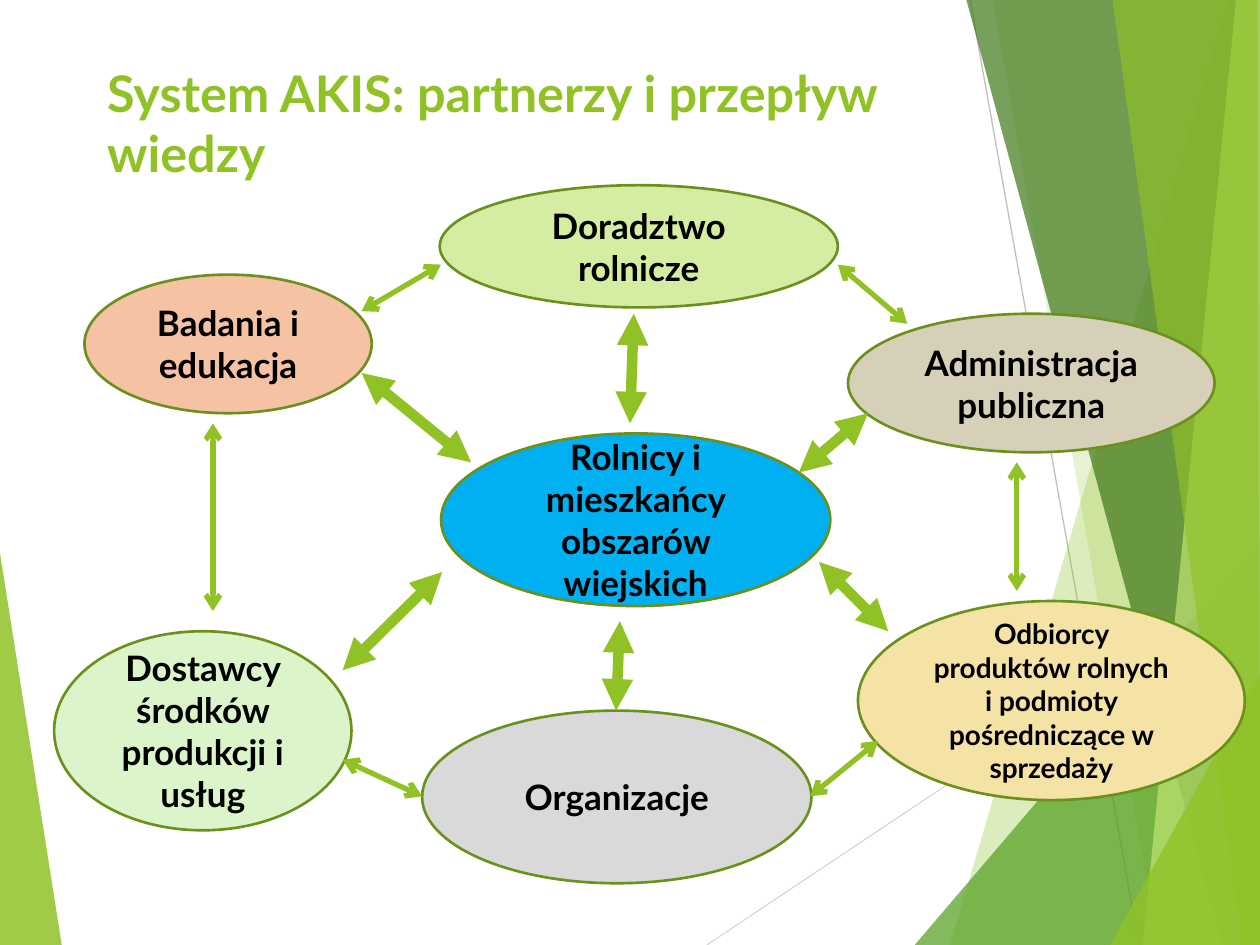
from lxml import etree
from pptx import Presentation
from pptx.dml.color import RGBColor
from pptx.enum.shapes import MSO_CONNECTOR, MSO_SHAPE
from pptx.enum.text import MSO_ANCHOR, MSO_AUTO_SIZE, PP_ALIGN
from pptx.oxml.ns import qn
from pptx.util import Inches, Pt

STRAIGHT = MSO_CONNECTOR.STRAIGHT
OVAL = MSO_SHAPE.OVAL
TOP, MIDDLE = MSO_ANCHOR.TOP, MSO_ANCHOR.MIDDLE
LEFT, CENTER = PP_ALIGN.LEFT, PP_ALIGN.CENTER
NO_FIT = MSO_AUTO_SIZE.NONE

COLORS = {
    "green": "90C226", "leaf": "54A021", "forest": "3F7819", "lime": "C0E474",
    "outline": "6B901C", "black": "000000", "light_gray": "D9D9D9",
    "mid_gray": "BFBFBF", "mint": "DBF4CA", "stone": "D6D0B8",
    "sand": "F5E3A5", "peach": "F5C2A3", "pale_lime": "D5EDA2", "blue": "00B0F0",
}

TITLE = "System AKIS: partnerzy i przepływ wiedzy"

LEFT_WEDGE = ("green", 85, [(0, 4.39), (0.49, 7.5), (0, 7.5)])
RIGHT_FACETS = [
    ("green", 30, [(9.75, 0), (7.54, 7.5), (10, 7.5), (10, 0)]),
    ("green", 20, [(7.88, 0), (9.19, 7.5), (10, 7.5), (10, 0)]),
    ("leaf", 72, [(7.26, 7.5), (10, 4.29), (10, 7.5)]),
    ("forest", 70, [(7.67, 0), (9.7, 7.5), (10, 7.5), (10, 0)]),
    ("lime", 70, [(9.81, 0), (9.07, 7.5), (10, 7.5), (10, 0)]),
    ("green", 65, [(8.83, 0), (9.86, 7.5), (10, 7.5), (9.98, 0)]),
    ("green", 80, [(8.81, 7.5), (10, 5.35), (10, 7.5)]),
]
THIN_LINES = [
    ("light_gray", (5.61, 7.5, 10, 4.57)),
    ("mid_gray", (7.7, 0, 9.04, 7.5)),
]

PARTNERS = [
    ("Dostawcy środków produkcji i usług", "mint", 20, (0.43, 5.01, 2.36, 1.58)),
    ("Organizacje", "light_gray", 20, (3.35, 5.64, 3.09, 1.37)),
    ("Administracja publiczna", "stone", 20, (6.73, 2.49, 2.91, 1.1)),
    ("Odbiorcy produktów rolnych i podmioty pośredniczące w sprzedaży",
     "sand", 16, (6.81, 4.77, 3.07, 1.58)),
    ("Badania i edukacja", "peach", 20, (0.67, 2.18, 2.28, 1.1)),
    ("Doradztwo rolnicze", "pale_lime", 20, (3.49, 1.47, 3.16, 0.97)),
    ("Rolnicy i mieszkańcy obszarów wiejskich", "blue", 20, (3.5, 3.44, 3.09, 1.37)),
]

CENTRE_FLOWS = [
    (3.51, 4.54, 2.72, 5.32), (4.92, 4.93, 4.89, 5.64), (3.74, 3.67, 2.87, 2.96),
    (7.05, 5.01, 6.5, 4.46), (6.89, 3.28, 6.34, 3.75), (5.03, 2.49, 5, 3.36),
]
RING_FLOWS = [
    (6.65, 2.1, 7.2, 2.57), (8.07, 3.67, 8.07, 4.69), (1.69, 3.36, 1.69, 4.85),
    (6.97, 5.88, 6.43, 6.32), (3.5, 2.1, 2.87, 2.47), (2.72, 6.03, 3.35, 6.32),
]


def rgb(name):
    """Return the named colour."""
    return RGBColor.from_string(COLORS[name])


def write_text(sp, text, size, color, align, anchor):
    """Put one bold paragraph into a shape."""
    tf = sp.text_frame
    frame_format = {"word_wrap": True, "auto_size": NO_FIT, "vertical_anchor": anchor}
    for name, value in frame_format.items():
        setattr(tf, name, value)
    p = tf.paragraphs[0]
    p.alignment = align
    r = p.add_run()
    r.text = text
    for name, value in {"name": "Lato", "size": Pt(size), "bold": True}.items():
        setattr(r.font, name, value)
    r.font.color.rgb = rgb(color)


def add_title(s):
    """Place and fill the title placeholder."""
    sp = s.shapes.title
    box = {"left": 0.75, "top": 0.44, "width": 6.94, "height": 0.88}
    for name, value in box.items():
        setattr(sp, name, Inches(value))
    write_text(sp, TITLE, 28.8, "green", LEFT, TOP)


def add_facet(s, color, opacity, points):
    """Draw a translucent background polygon."""
    corners = [(Inches(x), Inches(y)) for x, y in points]
    builder = s.shapes.build_freeform(*corners[0])
    builder.add_line_segments(corners[1:])
    sp = builder.convert_to_shape()
    sp.shadow.inherit = False
    sp.fill.solid()
    sp.fill.fore_color.rgb = rgb(color)
    sp.line.fill.background()
    clr = sp.fill._xPr.find(qn("a:solidFill"))[0]
    etree.SubElement(clr, qn("a:alpha"), val=str(opacity * 1000))


def add_line(s, ends, color, width, head=None):
    """Draw a straight line, with the given arrowhead at both ends."""
    sp = s.shapes.add_connector(STRAIGHT, *map(Inches, ends))
    sp.line.color.rgb = rgb(color)
    sp.line.width = Pt(width)
    if head:
        ln = sp.line._get_or_add_ln()
        for tag in ("a:headEnd", "a:tailEnd"):
            etree.SubElement(ln, qn(tag), type=head)
    etree.SubElement(sp._element.spPr, qn("a:effectLst"))


def add_partner(s, text, color, size, box):
    """Draw one labelled ellipse."""
    sp = s.shapes.add_shape(OVAL, *map(Inches, box))
    sp.shadow.inherit = False
    sp.fill.solid()
    sp.fill.fore_color.rgb = rgb(color)
    sp.line.color.rgb = rgb("outline")
    sp.line.width = Pt(1.5)
    write_text(sp, text, size, "black", CENTER, MIDDLE)


def main():
    """Build and save the slide."""
    prs = Presentation()
    prs.slide_width, prs.slide_height = Inches(10), Inches(7.5)
    s = prs.slides.add_slide(prs.slide_layouts[5])
    add_facet(s, *LEFT_WEDGE)
    for color, ends in THIN_LINES:
        add_line(s, ends, color, 0.75)
    for facet in RIGHT_FACETS:
        add_facet(s, *facet)
    add_title(s)
    for partner in PARTNERS:
        add_partner(s, *partner)
    for ends in CENTRE_FLOWS:
        add_line(s, ends, "green", 6, "triangle")
    for ends in RING_FLOWS:
        add_line(s, ends, "green", 3, "arrow")
    prs.save("out.pptx")


if __name__ == "__main__":
    main()
